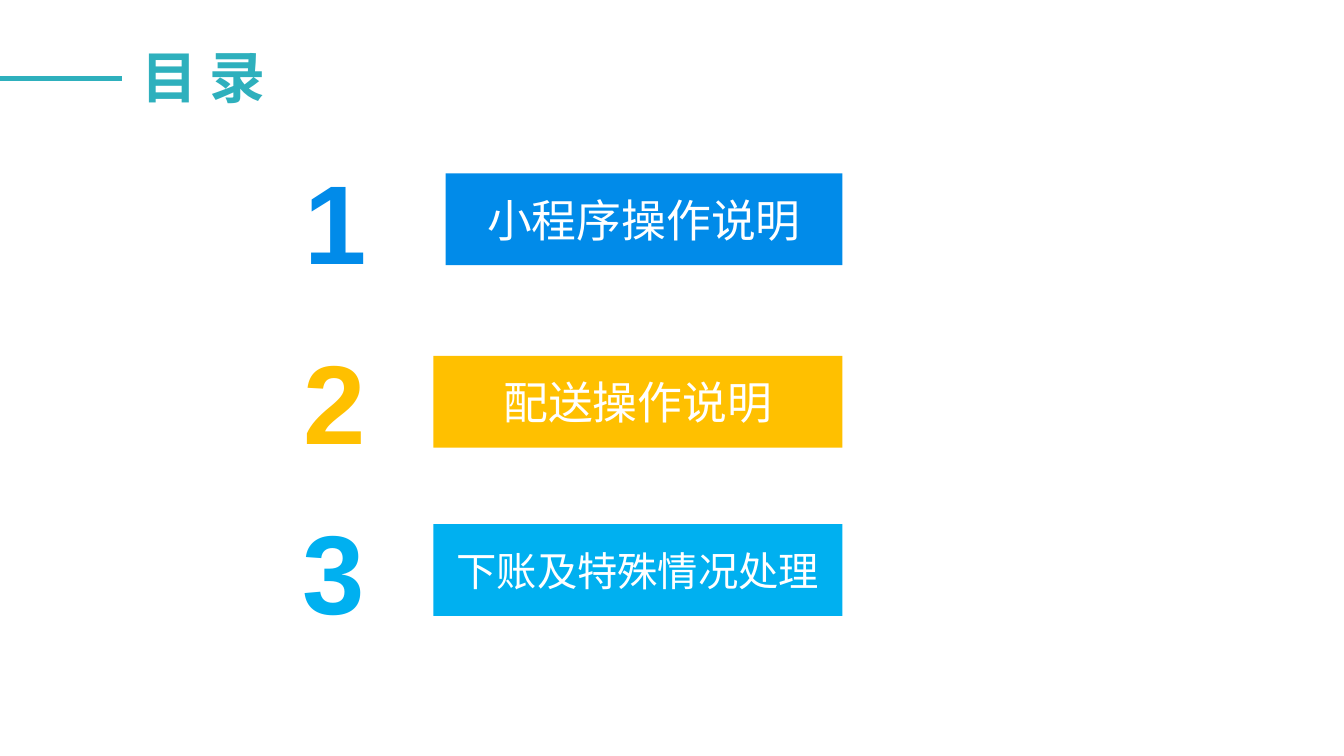
from lxml import etree
from pptx import Presentation
from pptx.dml.color import RGBColor
from pptx.enum.shapes import MSO_CONNECTOR, MSO_SHAPE
from pptx.enum.text import MSO_ANCHOR, MSO_AUTO_SIZE, PP_ALIGN
from pptx.oxml.ns import qn
from pptx.util import Cm, Pt

RECT = MSO_SHAPE.RECTANGLE
STRAIGHT = MSO_CONNECTOR.STRAIGHT
TOP, MIDDLE = MSO_ANCHOR.TOP, MSO_ANCHOR.MIDDLE
LEFT, CENTER = PP_ALIGN.LEFT, PP_ALIGN.CENTER
NO_FIT = MSO_AUTO_SIZE.NONE

TEAL = RGBColor(0x2E, 0xB0, 0xBD)
BLUE = RGBColor(0x01, 0x8B, 0xE9)
AMBER = RGBColor(0xFF, 0xC0, 0x00)
SKY = RGBColor(0x00, 0xB0, 0xF0)
WHITE = RGBColor(0xFF, 0xFF, 0xFF)

BAR_RIGHT = 21.23
ITEMS = [
    ("小程序操作说明", 32, BLUE, 11.23, 4.37, 5.89, 5.13, 3.81),
    ("配送操作说明", 32, AMBER, 10.92, 8.97, 5.64, 5.59, 8.36),
    ("下账及特殊情况处理", 28.8, SKY, 10.92, 13.21, 6.58, 3.68, 12.65),
]


def write(frame, text, size, color, font="Arial", bold=False,
          align=CENTER, anchor=MIDDLE):
    frame.text = text
    frame.vertical_anchor = anchor
    para = frame.paragraphs[0]
    para.alignment = align
    para.font.name = font
    para.font.size = Pt(size)
    para.font.bold = bold
    para.font.color.rgb = color


def add_title(slide, text):
    title = slide.shapes.title
    title.left, title.top = Cm(3.3), Cm(0.94)
    title.width, title.height = Cm(3.68), Cm(1.96)
    frame = title.text_frame
    frame.auto_size = NO_FIT
    frame.word_wrap = False
    write(frame, text, 40, TEAL, "Calibri", True, LEFT, TOP)


def add_rule(slide):
    rule = slide.shapes.add_connector(STRAIGHT, 0, Cm(1.98), Cm(3.07), Cm(1.98))
    rule.line.color.rgb = TEAL
    rule.line.width = Pt(3)
    etree.SubElement(rule._element.spPr, qn("a:effectLst"))


def add_bar(slide, text, size, color, left, top):
    bar = slide.shapes.add_shape(
        RECT, Cm(left), Cm(top), Cm(BAR_RIGHT - left), Cm(2.31))
    bar.shadow.inherit = False
    bar.fill.solid()
    bar.fill.fore_color.rgb = color
    bar.line.fill.background()
    write(bar.text_frame, text, size, WHITE)


def add_number(slide, number, color, left, top, width):
    box = slide.shapes.add_textbox(Cm(left), Cm(top), Cm(width), Cm(3.43))
    frame = box.text_frame
    frame.word_wrap = True
    frame.margin_left = frame.margin_right = 0
    frame.margin_top = frame.margin_bottom = 0
    write(frame, str(number), 80, color, bold=True)


def main():
    deck = Presentation()
    deck.slide_width, deck.slide_height = Cm(33.87), Cm(19.05)
    slide = deck.slides.add_slide(deck.slide_layouts[5])
    add_title(slide, "目 录")
    add_rule(slide)
    for number, item in enumerate(ITEMS, 1):
        text, size, color, left, top, num_left, num_width, num_top = item
        add_bar(slide, text, size, color, left, top)
        add_number(slide, number, color, num_left, num_top, num_width)
    deck.save("out.pptx")


if __name__ == "__main__":
    main()
